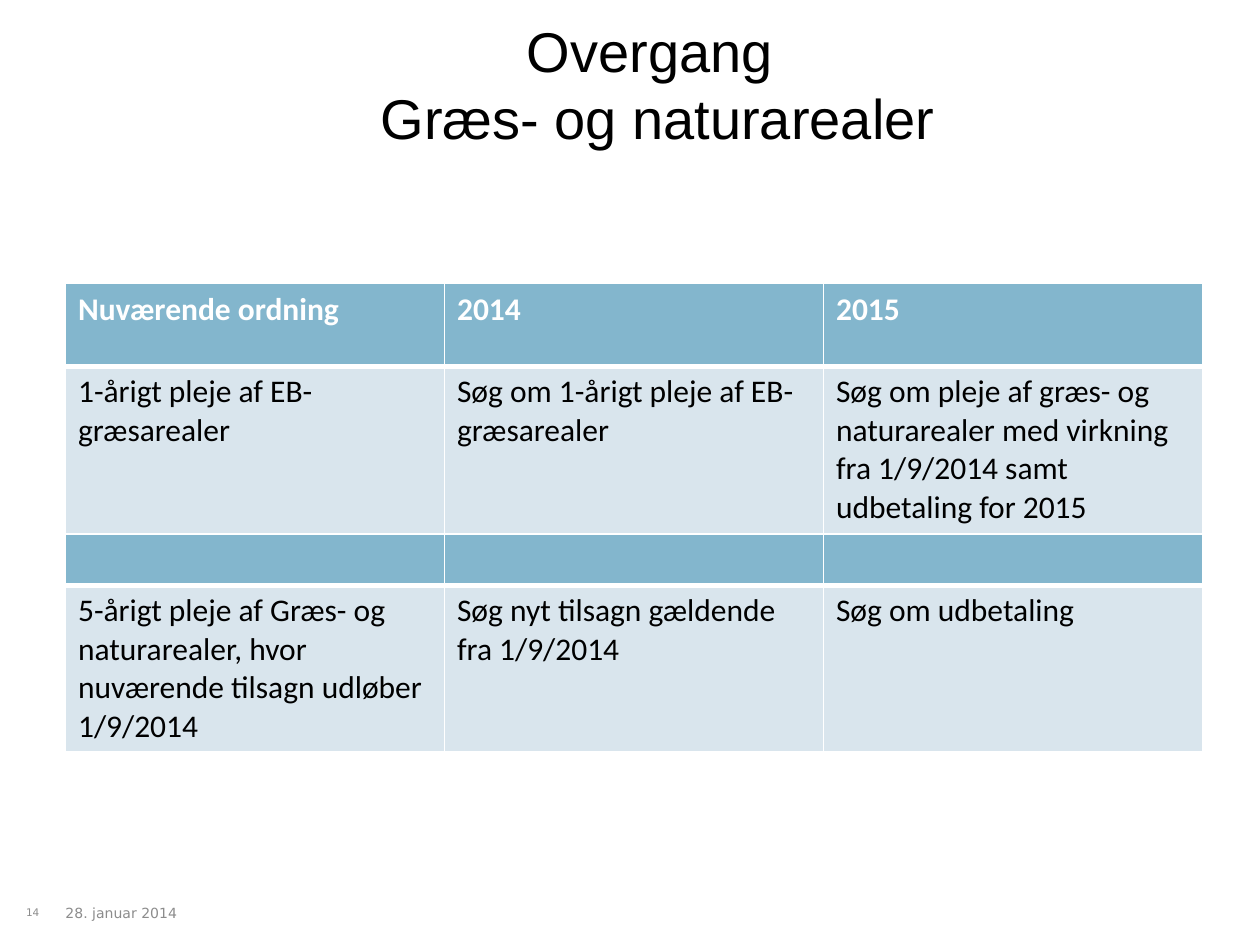
from lxml.etree import SubElement as Sub
from pptx import Presentation
from pptx.dml.color import RGBColor as Rgb
from pptx.enum.text import MSO_ANCHOR as Anchor, MSO_AUTO_SIZE as Fit, PP_ALIGN as Align
from pptx.oxml.ns import qn
from pptx.util import Cm, Pt

BLACK = Rgb(0, 0, 0)
WHITE = Rgb(255, 255, 255)
GREY = Rgb(0x8C, 0x8C, 0x8C)
BLUE = Rgb(0x83, 0xB6, 0xCD)
PALE = Rgb(0xD9, 0xE5, 0xED)

COL = 7.64
LEFT = 1.32
HEAD = ["Nuværende ordning", "2014", "2015"]
YEARLY = [
    "1-årigt pleje af EB-græsarealer",
    "Søg om 1-årigt pleje af EB-græsarealer",
    "Søg om pleje af græs- og naturarealer med virkning fra 1/9/2014 samt udbetaling for 2015",
]
LONG = [
    "5-årigt pleje af Græs- og naturarealer, hvor nuværende tilsagn udløber 1/9/2014",
    "Søg nyt tilsagn gældende fra 1/9/2014",
    "Søg om udbetaling",
]


class Page:
    title_font = {"name": "Arial", "size": Pt(32)}
    cell_font = {"name": "Calibri", "size": Pt(18)}
    foot_font = {"name": "DejaVu Sans"}

    def __init__(self, deck):
        self.slide = deck.slides.add_slide(deck.slide_layouts[5])

    def label(self, para, text, color, **style):
        run = para.add_run()
        run.text = text
        for key, value in style.items():
            setattr(run.font, key, value)
        run.font.color.rgb = color

    def title(self, lines, *box):
        shape = self.slide.shapes.title
        shape.left, shape.top, shape.width, shape.height = map(Cm, box)
        frame = shape.text_frame
        frame.auto_size = Fit.NONE
        frame.vertical_anchor = Anchor.MIDDLE
        for i, line in enumerate(lines):
            para = frame.add_paragraph() if i else frame.paragraphs[0]
            para.alignment = Align.CENTER
            self.label(para, line, BLACK, **self.title_font)

    def foot(self, text, size, align, *box):
        frame = self.slide.shapes.add_textbox(*map(Cm, box)).text_frame
        form = {"word_wrap": True, "vertical_anchor": Anchor.MIDDLE}
        form |= dict.fromkeys(
            ["margin_left", "margin_top", "margin_right", "margin_bottom"], 0)
        for key, value in form.items():
            setattr(frame, key, value)
        para = frame.paragraphs[0]
        para.alignment = align
        self.label(para, text, GREY, size=Pt(size), **self.foot_font)

    def edge(self, cell, base):
        """Draw white cell borders, with the lower one base points wide."""
        props = cell._tc.get_or_add_tcPr()
        for side, wide in {"L": 1, "R": 1, "T": 1, "B": base}.items():
            line = Sub(props, qn(f"a:ln{side}"), w=str(Pt(wide)))
            fill = Sub(line, qn("a:solidFill"))
            Sub(fill, qn("a:srgbClr"), val=str(WHITE))

    def table(self, top, highs, rows):
        """Place a table with a blue head row above a pale row."""
        grid = self.slide.shapes.add_table(
            len(rows), 3, Cm(LEFT), Cm(top), Cm(3 * COL), Cm(sum(highs))).table
        grid.first_row = grid.horz_banding = False
        for col in grid.columns:
            col.width = Cm(COL)
        for i, (row, high) in enumerate(zip(rows, highs)):
            grid.rows[i].height = Cm(high)
            back, ink, base = (PALE, BLACK, 1) if i else (BLUE, WHITE, 3)
            for j, text in enumerate(row):
                cell = grid.cell(i, j)
                self.edge(cell, base)
                cell.fill.solid()
                cell.fill.fore_color.rgb = back
                if text:
                    para = cell.text_frame.paragraphs[0]
                    self.label(para, text, ink, bold=not i, **self.cell_font)


def main():
    deck = Presentation()
    deck.slide_width, deck.slide_height = Cm(25.4), Cm(19.05)
    page = Page(deck)
    page.foot("28. januar 2014", 8, Align.LEFT, LEFT, 17.75, 4.93, 1.3)
    page.table(5.72, [1.67, 3.36], [HEAD, YEARLY])
    page.table(10.77, [1.03, 3.36], [[""] * 3, LONG])
    page.title(["Overgang ", "Græs- og naturarealer"], 3.66, 0.3, 19.2, 2.77)
    page.foot("14", 6, Align.CENTER, 0, 17.75, LEFT, 1.3)
    deck.save("out.pptx")


if __name__ == "__main__":
    main()
